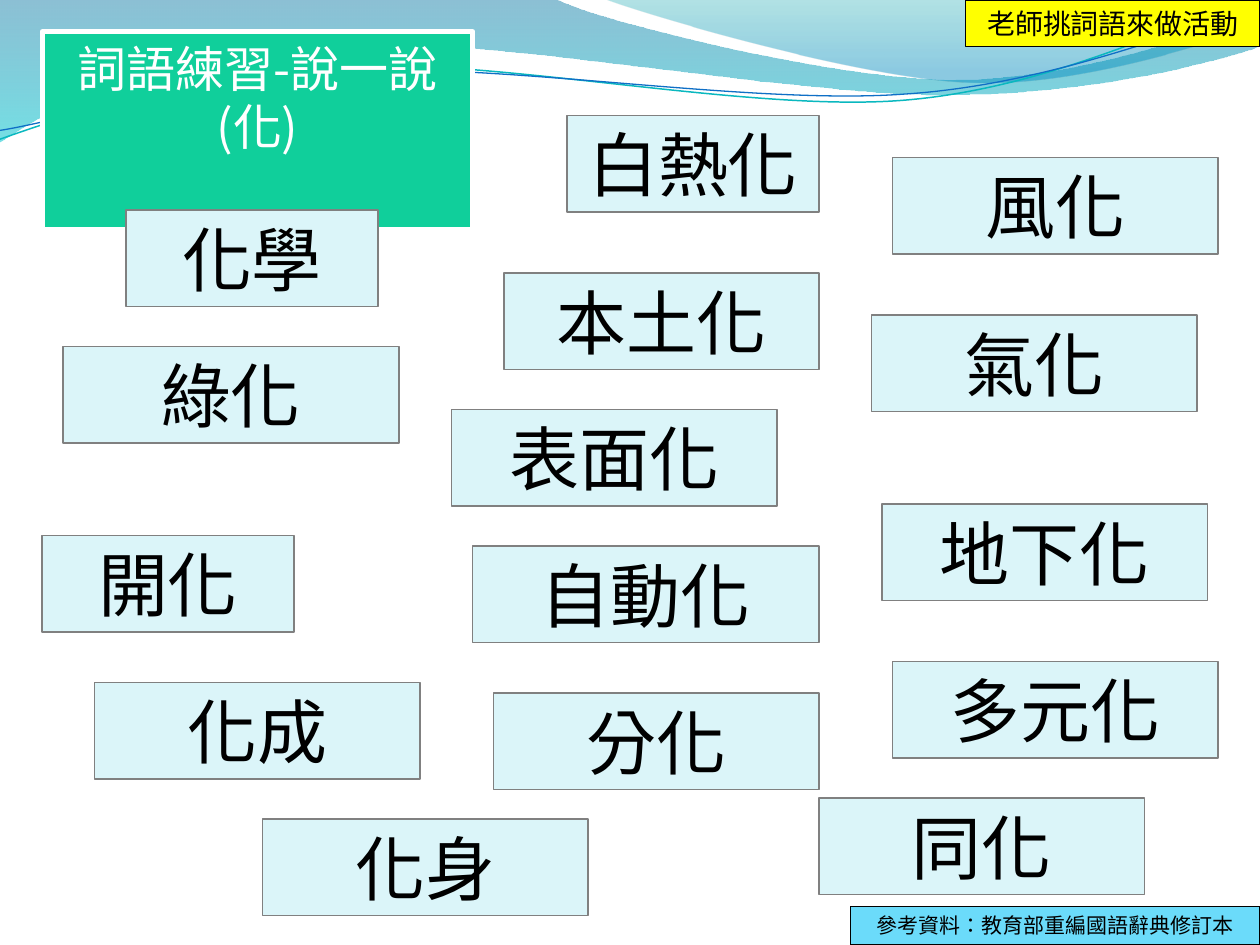
"""Build the word practice slide for the character 化."""
from dataclasses import dataclass

from lxml import etree
from pptx import Presentation
from pptx import util as u
from pptx.dml.color import RGBColor
from pptx.enum import shapes, text
from pptx.oxml import ns


@dataclass(frozen=True)
class Theme:
    """Colours, font and type sizes of the slide."""
    font: str = "Noto Sans CJK SC"
    ink: str = "000000"
    white: str = "FFFFFF"
    title: str = "10CF9B"
    card: str = "DBF5F9"
    edge: str = "808080"
    note: str = "FFFF00"
    source: str = "6BDBFA"
    deep: tuple = (("0074A1", 45, 0), ("00C6CF", 55, 1))
    pale: tuple = (("00A1A9", 30, 0), ("008BBF", 45, 0.8))
    teal: str = "0AB8BF"
    blue: str = "0F6FC6"
    big: int = 40
    head: int = 28
    mid: int = 16
    small: int = 12


T = Theme()
PAGE = (u.Cm(0), u.Cm(0), u.Cm(25.4), u.Cm(19.05))
GRID = 120
HIGH = u.Cm(1.95)
TILT = 357.3

BANDS = [
    (T.deep, [(0, 0), (4.4, -0.01), (4.76, 0.17, 6.64, 0.63, 7.58, 0.63),
              (8.53, 0.63, 9.58, 0.26, 10, 0.09), (10.01, 0.36),
              (9.83, 0.44, 8.7, 0.76, 7.46, 0.75),
              (6.22, 0.75, 3.82, 0.28, 2.57, 0.34),
              (1.29, 0.36, 0.46, 0.83, -0.01, 1.13)]),
    (T.pale, [(4.79, -0.01), (5.09, 0.11, 6.82, 0.62, 7.69, 0.65),
              (8.56, 0.69, 9.61, 0.32, 10, 0.21), (10, 0)]),
]
LINES = [
    (T.teal, 0.85, [(-0.02, 0.87), (0.47, 0.72, 1.58, 0.41, 2.78, 0.42),
                    (3.96, 0.42, 5.91, 0.93, 7.12, 0.9),
                    (8.32, 0.87, 9.4, 0.36, 10, 0.22)]),
    (T.blue, 0.75, [(-0.02, 0.8), (0.46, 0.75, 1.64, 0.45, 2.83, 0.46),
                    (4.03, 0.46, 5.96, 0.88, 7.16, 0.85),
                    (8.35, 0.83, 9.42, 0.42, 10.02, 0.3)]),
]
WORDS = [
    ("本土化", 48, 26, 30), ("開化", 4, 51, 24), ("化學", 12, 20, 24),
    ("綠化", 6, 33, 32), ("自動化", 45, 52, 33), ("化成", 9, 65, 31),
    ("同化", 78, 76, 31), ("化身", 25, 78, 31), ("白熱化", 54, 11, 24),
    ("風化", 85, 15, 31), ("分化", 47, 66, 31), ("表面化", 43, 39, 31),
    ("地下化", 84, 48, 31), ("氣化", 83, 30, 31), ("多元化", 85, 63, 31),
]


def rgb(code):
    """Turn a hex code into a colour."""
    return RGBColor.from_string(code)


def bend(shape, path):
    """Join each three corners of a Bezier segment into one curve."""
    nodes = iter(list(shape._element.iter(ns.qn("a:lnTo"))))
    for seg in path[1:]:
        parts = [next(nodes) for _ in range(len(seg) // 2)]
        if len(parts) == 3:
            curve = etree.Element(ns.qn("a:cubicBezTo"))
            parts[0].addprevious(curve)
            for part in parts:
                curve.append(part[0])
                part.getparent().remove(part)


def draw(tree, box, path, close):
    """Draw a path given in tenths of the box width."""
    left, top, wide, _ = box
    pts = [(int(left + seg[i] * wide / 10), int(top + seg[i + 1] * wide / 10))
           for seg in path for i in range(0, len(seg), 2)]
    pen = tree.build_freeform(*pts[0])
    pen.add_line_segments(pts[1:], close=close)
    shape = pen.convert_to_shape()
    bend(shape, path)
    shape.shadow.inherit = False
    return shape


def waves(slide, box):
    """Draw the tinted bands and thin lines along the top."""
    for tint, path in BANDS:
        shape = draw(slide.shapes, box, path, True)
        shape.line.fill.background()
        shape.fill.gradient()
        shape.fill.gradient_angle = 270
        for stop, (code, _, place) in zip(shape.fill.gradient_stops, tint):
            stop.color.rgb = rgb(code)
            stop.position = place
        nodes = list(shape._element.spPr.iter(ns.qn("a:srgbClr")))
        for node, (_, value, _) in zip(nodes, tint):
            etree.SubElement(node, ns.qn("a:alpha"), val=str(value * 1000))
    group = slide.shapes.add_group_shape()
    for code, width, path in LINES:
        shape = draw(group.shapes, box, path, False)
        shape.rotation = TILT
        shape.fill.background()
        shape.line.color.rgb = rgb(code)
        shape.line.width = u.Pt(width)


def label(shape, box, words, size, fill, edge=T.ink, ink=T.ink, width=0.75):
    """Place a box and set its centred text and colours."""
    shape.left, shape.top, shape.width, shape.height = map(round, box)
    shape.shadow.inherit = False
    shape.fill.solid()
    shape.fill.fore_color.rgb = rgb(fill)
    shape.line.color.rgb = rgb(edge)
    shape.line.width = u.Pt(width)
    frame = shape.text_frame
    frame.text = words
    frame.word_wrap = True
    frame.auto_size = text.MSO_AUTO_SIZE.SHAPE_TO_FIT_TEXT
    frame.vertical_anchor = text.MSO_ANCHOR.TOP
    para = frame.paragraphs[0]
    para.alignment = text.PP_ALIGN.CENTER
    font = para.runs[0].font
    font.size = u.Pt(size)
    font.name = T.font
    font.color.rgb = rgb(ink)
    font._element.set("lang", "zh-TW")
    etree.SubElement(font._element, ns.qn("a:ea"), typeface=T.font)


def panel(slide, box, *args):
    """Add a rectangle with a label."""
    kind = shapes.MSO_SHAPE.RECTANGLE
    label(slide.shapes.add_shape(kind, *map(round, box)), box, *args)


def title(slide, box):
    """Move the title above the waves."""
    shape = slide.shapes.title
    label(shape, box, "詞語練習-說一說(化)", T.head, T.title,
          T.white, T.white, 3)
    slide.shapes._spTree.append(shape._element)


def cards(slide, box):
    """Scatter the word cards on a fine grid over the box."""
    left, top, wide, _ = box
    unit = wide / GRID
    for word, col, row, span in WORDS:
        spot = (left + col * unit, top + row * unit, span * unit, HIGH)
        panel(slide, spot, word, T.big, T.card, T.edge)


def notes(slide, box):
    """Put the teacher tip and the reference on the right edge."""
    left, top, wide, high = box
    for words, size, fill, width, height, low in (
            ("老師挑詞語來做活動", T.mid, T.note, 5.93, 0.94, False),
            ("參考資料：教育部重編國語辭典修訂本", T.small, T.source,
             8.26, 0.77, True)):
        width, height = u.Cm(width), u.Cm(height)
        spot = (left + wide - width, top + (high - height if low else 0),
                width, height)
        panel(slide, spot, words, size, fill)


def main():
    """Build and save the slide."""
    deck = Presentation()
    deck.slide_width, deck.slide_height = PAGE[2:]
    slide = deck.slides.add_slide(deck.slide_layouts[5])
    waves(slide, PAGE)
    title(slide, (u.Cm(0.85), u.Cm(0.64), u.Cm(8.68), u.Cm(2.63)))
    cards(slide, PAGE)
    notes(slide, PAGE)
    deck.save("out.pptx")


if __name__ == "__main__":
    main()
